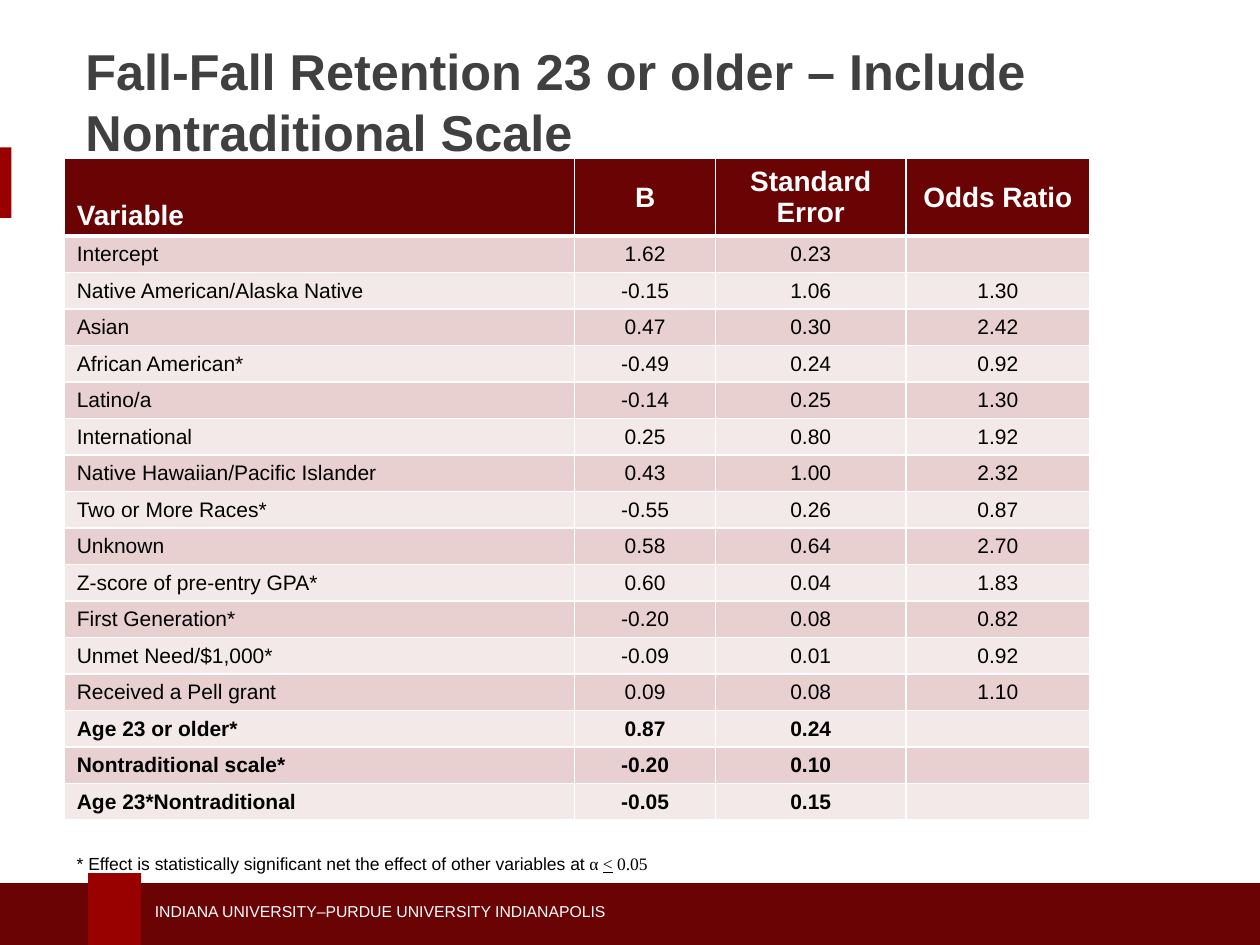
import pptx
import pptx.util
import pptx.dml.color
import pptx.enum.shapes
import pptx.enum.text
from lxml import etree

Inches = pptx.util.Inches
Pt = pptx.util.Pt
ANCHOR = pptx.enum.text.MSO_ANCHOR
ALIGN = pptx.enum.text.PP_ALIGN

# Content
TITLE = "Fall-Fall Retention 23 or older – Include Nontraditional Scale"
FOOTER = "INDIANA UNIVERSITY–PURDUE UNIVERSITY INDIANAPOLIS"
HEADER = ("Variable", "B", "Standard Error", "Odds Ratio")
ROWS = [
    ("Intercept", "1.62", "0.23", ""),
    ("Native American/Alaska Native", "-0.15", "1.06", "1.30"),
    ("Asian", "0.47", "0.30", "2.42"),
    ("African American*", "-0.49", "0.24", "0.92"),
    ("Latino/a", "-0.14", "0.25", "1.30"),
    ("International", "0.25", "0.80", "1.92"),
    ("Native Hawaiian/Pacific Islander", "0.43", "1.00", "2.32"),
    ("Two or More Races*", "-0.55", "0.26", "0.87"),
    ("Unknown", "0.58", "0.64", "2.70"),
    ("Z-score of pre-entry GPA*", "0.60", "0.04", "1.83"),
    ("First Generation*", "-0.20", "0.08", "0.82"),
    ("Unmet Need/$1,000*", "-0.09", "0.01", "0.92"),
    ("Received a Pell grant", "0.09", "0.08", "1.10"),
    ("Age 23 or older*", "0.87", "0.24", ""),
    ("Nontraditional scale*", "-0.20", "0.10", ""),
    ("Age 23*Nontraditional", "-0.05", "0.15", ""),
]
BOLD_ROWS = 3  # the last rows stand out
NOTE = [  # text, font, underline
    ("* Effect is statistically significant net the effect of other variables at ", "Arial", False),
    ("α ", "Times New Roman", False),
    ("<", "Times New Roman", True),
    (" 0.05", "Times New Roman", False),
]
COLORS = {"maroon": "690304", "crimson": "990000", "title": "404041", "white": "FFFFFF",
          "black": "000000", "band_dark": "E8D0D0", "band_light": "F4E9E9"}
BLOCKS = [  # left, top, width, height, colour
    (0, 1.17, 0.09, 0.56, "crimson"),
    (0, 7.01, 10, 0.49, "maroon"),
    (0.7, 6.93, 0.42, 0.57, "crimson"),
]
COLUMN_WIDTHS = (4.05, 1.12, 1.51, 1.46)
HEADER_HEIGHT, ROW_HEIGHT = 0.59, 0.29


def color(name):
    return pptx.dml.color.RGBColor.from_string(COLORS[name])


def style(font, size, name, bold=False, face="Arial"):
    font.size, font.name, font.bold = Pt(size), face, bold
    font.color.rgb = color(name)


def add_text_box(page, left, top, width, height, anchor):
    box = page.shapes.add_textbox(Inches(left), Inches(top), Inches(width), Inches(height))
    box.text_frame.word_wrap = True
    box.text_frame.vertical_anchor = anchor
    return box.text_frame.paragraphs[0]


def add_borders(cell, bottom):
    properties = cell._tc.get_or_add_tcPr()
    sides = (("lnL", 1), ("lnR", 1), ("lnT", 1), ("lnB", bottom))
    for index, (side, width) in enumerate(sides):
        line = etree.Element(pptx.oxml.ns.qn("a:" + side), w=str(Pt(width)))
        fill = etree.SubElement(line, pptx.oxml.ns.qn("a:solidFill"))
        etree.SubElement(fill, pptx.oxml.ns.qn("a:srgbClr"), val=COLORS["white"])
        properties.insert(index, line)


def fill_cell(cell, text, column, size, text_color, bold, fill, bottom):
    cell.text = text
    cell.margin_top = cell.margin_bottom = Inches(0.04)
    cell.vertical_anchor = ANCHOR.MIDDLE
    para = cell.text_frame.paragraphs[0]
    para.alignment = ALIGN.CENTER if column else ALIGN.LEFT
    style(para.font, size, text_color, bold)
    if not text:  # keeps an empty cell from stretching its row
        end = etree.SubElement(para._p, pptx.oxml.ns.qn("a:endParaRPr"))
        end.set("sz", str(size * 100))
    cell.fill.solid()
    cell.fill.fore_color.rgb = color(fill)
    add_borders(cell, bottom)


def add_results(page):
    height = HEADER_HEIGHT + ROW_HEIGHT * len(ROWS)
    table = page.shapes.add_table(len(ROWS) + 1, len(HEADER), Inches(0.51), Inches(1.26),
                                  Inches(sum(COLUMN_WIDTHS)), Inches(height)).table
    for column, width in enumerate(COLUMN_WIDTHS):
        table.columns[column].width = Inches(width)
    for number, values in enumerate([HEADER] + ROWS):
        table.rows[number].height = Inches(ROW_HEIGHT if number else HEADER_HEIGHT)
        if number == 0:
            look = (16, "white", True, "maroon", 3)
        else:
            band = "band_dark" if number % 2 else "band_light"
            look = (12, "black", number > len(ROWS) - BOLD_ROWS, band, 1)
        for column, text in enumerate(values):
            fill_cell(table.cell(number, column), text, column, *look)
    table.cell(0, 0).vertical_anchor = ANCHOR.BOTTOM


def main():
    deck = pptx.Presentation()
    deck.slide_width, deck.slide_height = Inches(10), Inches(7.5)
    page = deck.slides.add_slide(deck.slide_layouts[6])

    # Side mark and footer band
    for left, top, width, height, name in BLOCKS:
        block = page.shapes.add_shape(pptx.enum.shapes.MSO_SHAPE.RECTANGLE, Inches(left),
                                      Inches(top), Inches(width), Inches(height))
        block.shadow.inherit = False
        block.fill.solid()
        block.fill.fore_color.rgb = color(name)
        block.line.fill.background()
    para = add_text_box(page, 1.13, 7.11, 3.95, 0.25, ANCHOR.MIDDLE)
    para.text = FOOTER
    style(para.font, 9, "white")

    # Title
    para = add_text_box(page, 0.58, 0.45, 8.75, 0.7, ANCHOR.MIDDLE)
    para.text = TITLE
    style(para.font, 28.8, "title", True)

    add_results(page)

    # Footnote
    para = add_text_box(page, 0.51, 6.72, 7.92, 0.27, ANCHOR.TOP)
    for text, face, underline in NOTE:
        span = para.add_run()
        span.text = text
        style(span.font, 10, "black", face=face)
        span.font.underline = underline

    deck.save("out.pptx")


if __name__ == "__main__":
    main()
